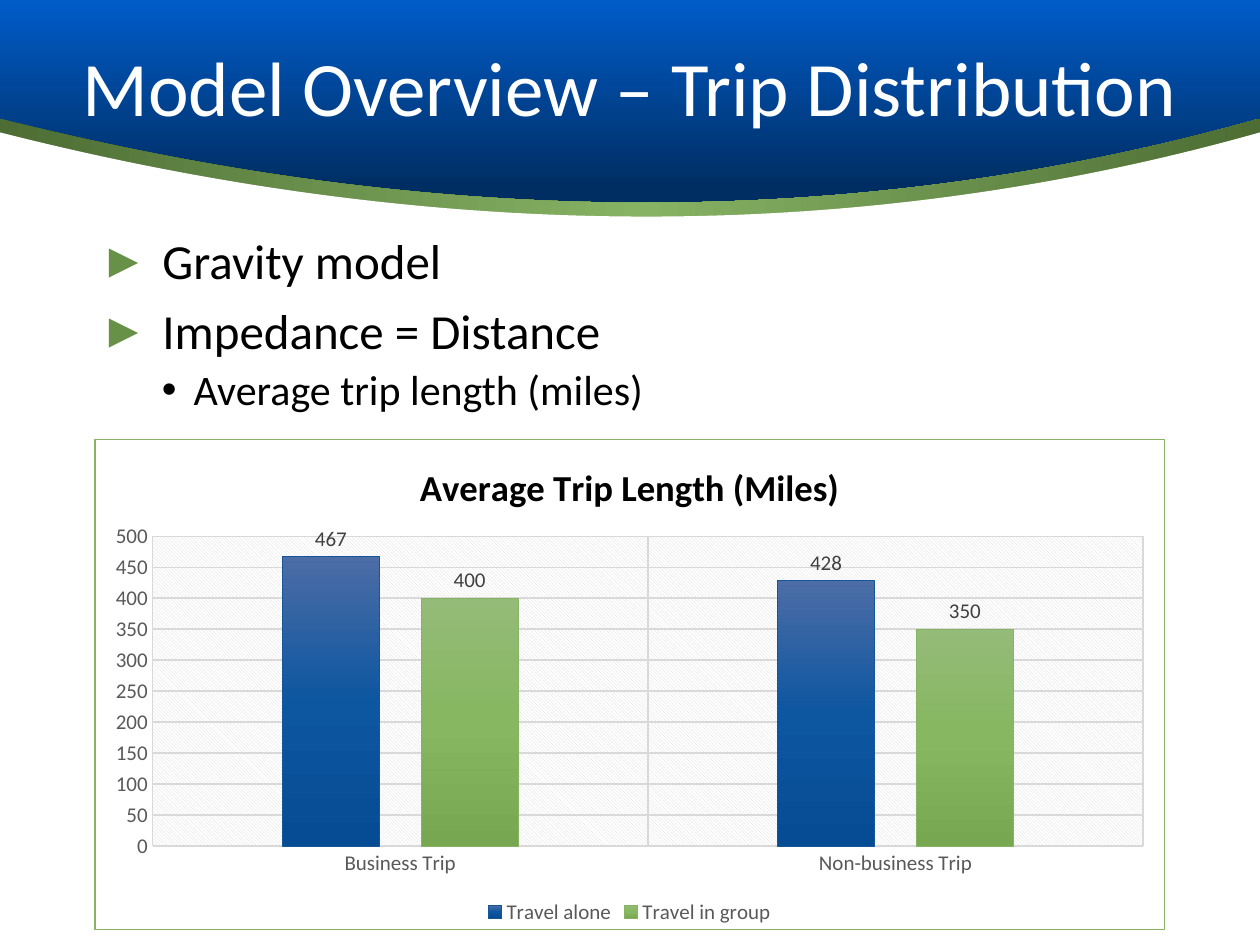
from lxml import etree
from pptx import Presentation
from pptx.chart.data import CategoryChartData
from pptx.dml.color import RGBColor
from pptx.enum.chart import XL_CHART_TYPE as ChartType
from pptx.enum.chart import XL_LABEL_POSITION as LabelPos
from pptx.enum.chart import XL_LEGEND_POSITION as LegendPos
from pptx.enum.chart import XL_TICK_MARK as TickMark
from pptx.enum.text import MSO_ANCHOR, MSO_AUTO_SIZE, PP_ALIGN
from pptx.oxml import parse_xml
from pptx.oxml.ns import nsdecls, qn
from pptx.util import Cm, Pt

FONT = "Calibri"
WHITE = RGBColor(0xFF, 0xFF, 0xFF)
BLACK = RGBColor(0x00, 0x00, 0x00)
NAVY = RGBColor(0x00, 0x2D, 0x62)
SKY = RGBColor(0x00, 0x5C, 0xC9)
MOSS = RGBColor(0x4D, 0x6D, 0x34)
LEAF = RGBColor(0x87, 0xB3, 0x64)
BULLET_GREEN = RGBColor(0x67, 0x91, 0x46)
BLUE_LINE = RGBColor(0x14, 0x56, 0x99)
GRID_GRAY = RGBColor(0xD9, 0xD9, 0xD9)
AXIS_GRAY = RGBColor(0x59, 0x59, 0x59)
LABEL_GRAY = RGBColor(0x40, 0x40, 0x40)
BLUE_STOPS = [(0, RGBColor(0x4C, 0x6D, 0xA6)), (50, RGBColor(0x0D, 0x56, 0xA0)),
              (100, RGBColor(0x06, 0x4C, 0x94))]
GREEN_STOPS = [(0, RGBColor(0x94, 0xBB, 0x78)), (50, RGBColor(0x87, 0xB7, 0x60)),
               (100, RGBColor(0x77, 0xA7, 0x51))]

SLIDE_W, SLIDE_H = 25.4, 19.05
BAND_TOP, BAND_STEP = 2.39, 0.28
PANEL_H = SLIDE_H - BAND_TOP - BAND_STEP
CURVE = [(8.38, 2.13), (16.94, 2.39), (SLIDE_W, 0)]

TRIPS = ["Business Trip", "Non-business Trip"]
SERIES = [("Travel alone", (467, 428), BLUE_STOPS, BLUE_LINE),
          ("Travel in group", (400, 350), GREEN_STOPS, LEAF)]


def set_gradient(props, stops, angle):
    """Replace the solid fill of a properties element; angle is clockwise degrees."""
    gs = "".join(f'<a:gs pos="{pos * 1000}"><a:srgbClr val="{color}"/></a:gs>'
                 for pos, color in stops)
    grad = parse_xml(f'<a:gradFill {nsdecls("a")} rotWithShape="1"><a:gsLst>{gs}</a:gsLst>'
                     f'<a:lin ang="{angle * 60000}" scaled="0"/></a:gradFill>')
    props.replace(props.find(qn("a:solidFill")), grad)


def set_font(font, size, color, bold=False):
    font.name, font.size, font.bold = FONT, Pt(size), bold
    font.color.rgb = color


def place(shape, left, top, width, height):
    shape.left, shape.top = Cm(left), Cm(top)
    shape.width, shape.height = Cm(width), Cm(height)


def add_curved_panel(slide, top, z):
    """Panel with a sagging top edge, set at depth z behind the placeholders."""
    builder = slide.shapes.build_freeform(0, 0)
    builder.add_line_segments([(Cm(SLIDE_W), 0), (Cm(SLIDE_W), Cm(PANEL_H)),
                               (0, Cm(PANEL_H))], close=True)
    sp = builder.convert_to_shape(0, Cm(top))
    pts = "".join(f'<a:pt x="{Cm(x)}" y="{Cm(y)}"/>' for x, y in CURVE)
    curve = parse_xml(f'<a:cubicBezTo {nsdecls("a")}>{pts}</a:cubicBezTo>')
    top_edge = sp.element.find(".//" + qn("a:lnTo"))
    top_edge.getparent().replace(top_edge, curve)
    sp.shadow.inherit = False
    sp.line.fill.background()
    sp.fill.solid()
    sp.fill.fore_color.rgb = WHITE
    sp.element.getparent().insert(2 + z, sp.element)
    return sp


def add_background(slide):
    slide.background.fill.solid()
    set_gradient(slide.element.find(".//" + qn("p:bgPr")),
                 [(0, NAVY), (80, NAVY), (100, SKY)], 270)
    band = add_curved_panel(slide, BAND_TOP, 0)
    set_gradient(band.element.spPr, [(0, MOSS), (51, LEAF), (100, MOSS)], 0)
    add_curved_panel(slide, BAND_TOP + BAND_STEP, 1)


def fill_title(title, text):
    place(title, 0.99, 0, 23.42, 3.68)
    tf = title.text_frame
    tf.auto_size = MSO_AUTO_SIZE.NONE
    tf.vertical_anchor = MSO_ANCHOR.MIDDLE
    p = tf.paragraphs[0]
    p.alignment, p.line_spacing = PP_ALIGN.CENTER, 0.9
    r = p.add_run()
    r.text = text
    set_font(r.font, 44, WHITE)


def add_bullet(p, text, level):
    char, color, left, hang, size, before = [
        ("►", BULLET_GREEN, 1.27, 1.27, 28, 10),
        ("•", BLACK, 1.9, 0.64, 24, 5)][level]
    p.level, p.line_spacing, p.space_before = level, 0.9, Pt(before)
    pPr = p._p.get_or_add_pPr()
    pPr.set("marL", str(Cm(left)))
    pPr.set("indent", str(-Cm(hang)))
    bu_clr = etree.SubElement(pPr, qn("a:buClr"))
    etree.SubElement(bu_clr, qn("a:srgbClr"), val=str(color))
    etree.SubElement(pPr, qn("a:buFont"), typeface="Arial")
    etree.SubElement(pPr, qn("a:buChar"), char=char)
    r = p.add_run()
    r.text = text
    set_font(r.font, size, BLACK)


def fill_body(body, items):
    place(body, 1.75, 4.65, 21.89, 12.04)
    tf = body.text_frame
    tf.auto_size = MSO_AUTO_SIZE.NONE
    for i, (text, level) in enumerate(items):
        add_bullet(tf.add_paragraph() if i else tf.paragraphs[0], text, level)


def format_axis(axis):
    axis.major_tick_mark = axis.minor_tick_mark = TickMark.NONE
    axis.has_major_gridlines = True
    for line in (axis.format.line, axis.major_gridlines.format.line):
        line.color.rgb, line.width = GRID_GRAY, Pt(0.75)
    set_font(axis.tick_labels.font, 12, AXIS_GRAY)


def format_areas(chart):
    """Frame the chart, hatch the plot area and fix its position."""
    space = chart.element.find(qn("c:chart"))
    space.addnext(parse_xml(
        f'<c:spPr {nsdecls("c", "a")}><a:solidFill><a:srgbClr val="{WHITE}"/></a:solidFill>'
        f'<a:ln w="{Pt(0.75)}"><a:solidFill><a:srgbClr val="{LEAF}"/></a:solidFill></a:ln>'
        '</c:spPr>'))
    plot_area = space.find(qn("c:plotArea"))
    plot_area.append(parse_xml(
        f'<c:spPr {nsdecls("c", "a")}><a:pattFill prst="ltDnDiag">'
        f'<a:fgClr><a:srgbClr val="{GRID_GRAY}"/></a:fgClr>'
        f'<a:bgClr><a:srgbClr val="{WHITE}"/></a:bgClr></a:pattFill></c:spPr>'))
    for old in plot_area.findall(qn("c:layout")):
        plot_area.remove(old)
    sizes = "".join(f'<c:{tag} val="{val}"/>' for tag, val in
                    [("x", 0.054), ("y", 0.198), ("w", 0.926), ("h", 0.632)])
    plot_area.insert(0, parse_xml(
        f'<c:layout {nsdecls("c")}><c:manualLayout><c:layoutTarget val="inner"/>'
        f'<c:xMode val="edge"/><c:yMode val="edge"/>{sizes}</c:manualLayout></c:layout>'))


def format_series(series, stops, line_color):
    series.format.fill.solid()
    series.format.fill.fore_color.rgb = WHITE
    set_gradient(series.format.fill._xPr, stops, 90)
    series.format.line.color.rgb = line_color
    series.format.line.width = Pt(0.5)
    labels = series.data_labels
    labels.show_value, labels.position = True, LabelPos.OUTSIDE_END
    set_font(labels.font, 12, LABEL_GRAY)


def add_trip_chart(slide):
    data = CategoryChartData()
    data.categories = TRIPS
    for name, values, _, _ in SERIES:
        data.add_series(name, values)
    chart = slide.shapes.add_chart(ChartType.COLUMN_CLUSTERED, Cm(1.9), Cm(8.84),
                                   Cm(21.59), Cm(9.91), data).chart
    set_font(chart.font, 10, BLACK)
    chart.has_title = True
    r = chart.chart_title.text_frame.paragraphs[0].add_run()
    r.text = "Average Trip Length (Miles)"
    set_font(r.font, 21, BLACK, bold=True)
    chart.has_legend = True
    chart.legend.position = LegendPos.BOTTOM
    chart.legend.include_in_layout = False
    set_font(chart.legend.font, 12, AXIS_GRAY)
    format_axis(chart.category_axis)
    values = chart.value_axis
    format_axis(values)
    values.format.line.fill.background()
    values.minimum_scale, values.maximum_scale, values.major_unit = 0, 500, 50
    plot = chart.plots[0]
    plot.gap_width, plot.overlap, plot.vary_by_categories = 267, -43, False
    for series, (_, _, stops, line_color) in zip(plot.series, SERIES):
        format_series(series, stops, line_color)
    format_areas(chart)


def main():
    prs = Presentation()
    prs.slide_width, prs.slide_height = Cm(SLIDE_W), Cm(SLIDE_H)
    slide = prs.slides.add_slide(prs.slide_layouts[1])
    add_background(slide)
    fill_title(slide.shapes.title, "Model Overview – Trip Distribution")
    fill_body(slide.placeholders[1], [("Gravity model", 0), ("Impedance = Distance", 0),
                                      ("Average trip length (miles)", 1)])
    add_trip_chart(slide)
    prs.save("out.pptx")


if __name__ == "__main__":
    main()
